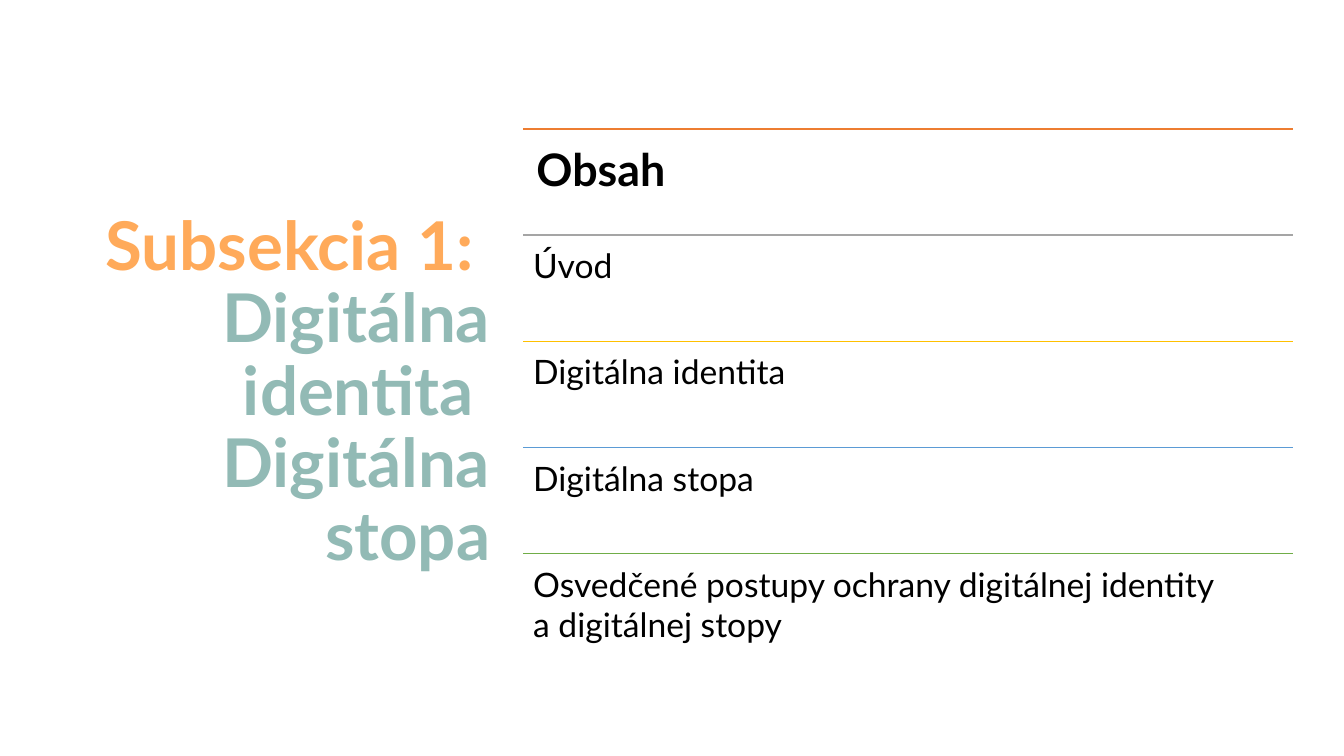
from lxml import etree
from pptx import Presentation
from pptx.dml.color import RGBColor
from pptx.enum.shapes import MSO_CONNECTOR
from pptx.enum.text import MSO_ANCHOR, PP_ALIGN
from pptx.oxml.ns import qn
from pptx.util import Inches, Pt

STRAIGHT = MSO_CONNECTOR.STRAIGHT
TOP, MIDDLE = MSO_ANCHOR.TOP, MSO_ANCHOR.MIDDLE
LEFT, RIGHT = PP_ALIGN.LEFT, PP_ALIGN.RIGHT

FONT = "Lato"
BLACK = RGBColor(0x00, 0x00, 0x00)
ORANGE = RGBColor(0xFF, 0xAA, 0x5A)
TEAL = RGBColor(0x92, 0xBA, 0xB5)
RUST = RGBColor(0xED, 0x7D, 0x31)
GRAY = RGBColor(0xA5, 0xA5, 0xA5)
GOLD = RGBColor(0xFF, 0xC0, 0x00)
BLUE = RGBColor(0x5B, 0x9B, 0xD5)
GREEN = RGBColor(0x70, 0xAD, 0x47)

TITLE_LINES = [
    ("Subsekcia 1: ", ORANGE),
    ("Digitálna identita ", TEAL),
    ("Digitálna stopa", TEAL),
]
HEADING = ("Obsah", RUST)
TOPICS = [
    ("Úvod", GRAY),
    ("Digitálna identita", GOLD),
    ("Digitálna stopa", BLUE),
    ("Osvedčené postupy ochrany digitálnej identity \na digitálnej stopy", GREEN),
]

LIST_LEFT, LIST_TOP, LIST_WIDTH = 5.19, 1.28, 7.63
ROW_HEIGHT = 1.053


def add_text(page, area, lines, size, bold, inset, align=LEFT, anchor=TOP):
    box = page.shapes.add_textbox(*[Inches(length) for length in area])
    frame = box.text_frame
    frame.word_wrap = True
    frame.vertical_anchor = anchor
    frame.margin_left = frame.margin_right = Inches(inset[0])
    frame.margin_top = frame.margin_bottom = Inches(inset[1])
    para = frame.paragraphs[0]
    para.alignment = align
    for index, (text, color) in enumerate(lines):
        if index:
            para.add_line_break()
        span = para.add_run()
        span.text = text
        span.font.name = FONT
        span.font.size = Pt(size)
        span.font.bold = bold
        span.font.color.rgb = color
    return para


def add_rule(page, top, color):
    rule = page.shapes.add_connector(
        STRAIGHT, Inches(LIST_LEFT), Inches(top),
        Inches(LIST_LEFT + LIST_WIDTH), Inches(top))
    rule.line.color.rgb = color
    rule.line.width = Pt(1)
    etree.SubElement(rule.line._get_or_add_ln().getparent(), qn("a:effectLst"))


def main():
    deck = Presentation()
    deck.slide_width, deck.slide_height = Inches(13.33), Inches(7.5)
    page = deck.slides.add_slide(deck.slide_layouts[6])

    title = add_text(page, (0.38, 0.85, 4.58, 6.11), TITLE_LINES,
                     48, True, (0.1, 0.05), RIGHT, MIDDLE)
    title.line_spacing = 0.9

    for row, (text, color) in enumerate([HEADING] + TOPICS):
        top = LIST_TOP + row * ROW_HEIGHT
        is_heading = row == 0
        size = 32 if is_heading else 24
        inset = 0.13 if is_heading else 0.1
        add_rule(page, top, color)
        lines = [(line, BLACK) for line in text.split("\n")]
        add_text(page, (LIST_LEFT, top, LIST_WIDTH, ROW_HEIGHT), lines,
                 size, is_heading, (inset, inset))

    deck.save("out.pptx")


if __name__ == "__main__":
    main()
